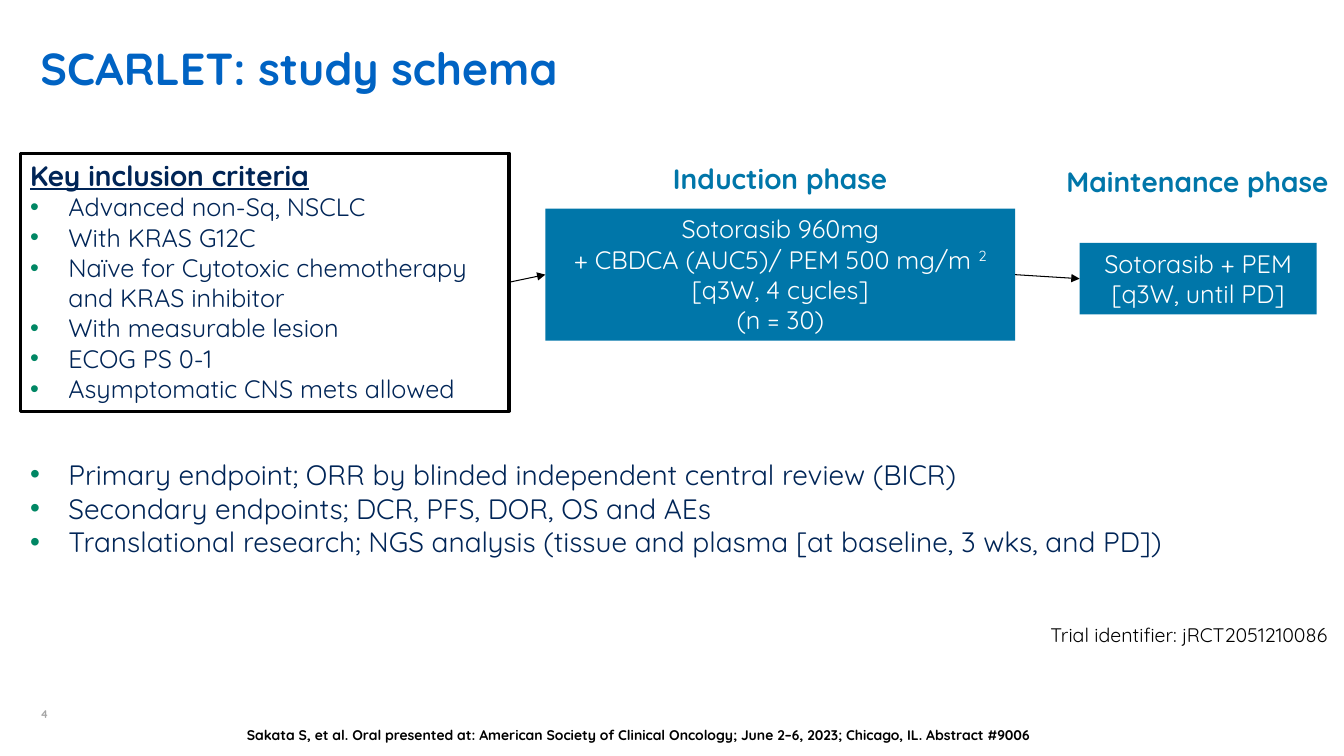
from dataclasses import dataclass
from lxml import etree
from pptx import Presentation
from pptx.dml.color import RGBColor
from pptx.enum.shapes import MSO_CONNECTOR, MSO_SHAPE
from pptx.enum.text import MSO_ANCHOR, PP_ALIGN
from pptx.oxml.ns import qn
from pptx.util import Inches, Pt

RECT = MSO_SHAPE.RECTANGLE
STRAIGHT = MSO_CONNECTOR.STRAIGHT
TOP, MIDDLE, BOTTOM = MSO_ANCHOR.TOP, MSO_ANCHOR.MIDDLE, MSO_ANCHOR.BOTTOM
LEFT, CENTER, RIGHT = PP_ALIGN.LEFT, PP_ALIGN.CENTER, PP_ALIGN.RIGHT


@dataclass(frozen=True)
class Theme:
    font: str = "Quicksand"
    title: str = "0063C3"
    navy: str = "002557"
    teal: str = "0076A9"
    green: str = "008764"
    gray: str = "A6A6A6"
    black: str = "000000"
    white: str = "FFFFFF"
    huge: int = 32
    large: int = 20
    body: int = 18
    small: int = 14
    note: int = 10
    tiny: int = 8


T = Theme()

TITLE = "SCARLET: study schema"
HEAD = "Key inclusion criteria"
CRITERIA = [
    "Advanced non-Sq, NSCLC",
    "With KRAS G12C",
    "Naïve for Cytotoxic chemotherapy and KRAS inhibitor",
    "With measurable lesion",
    "ECOG PS 0-1",
    "Asymptomatic CNS mets allowed",
]
ENDPOINTS = [
    "Primary endpoint; ORR by blinded independent central review (BICR)",
    "Secondary endpoints; DCR, PFS, DOR, OS and AEs",
    "Translational research; NGS analysis (tissue and plasma [at baseline, 3 wks, and PD])",
]
INDUCTION = [
    ["Sotorasib 960mg"],
    ["+ CBDCA (AUC5)/ PEM 500 mg/m ", ("2",), " [q3W, 4 cycles]"],
    ["(n = 30)"],
]
MAINTAIN = [["Sotorasib + PEM [q3W, until PD]"]]
SOURCE = ("Sakata S, et al. Oral presented at: American Society of Clinical Oncology; "
          "June 2–6, 2023; Chicago, IL. Abstract #9006")

# Shares of the slide in percent: left, top, width, height
SPOTS = {
    "title": (3, 5.33, 94, 7.2),
    "criteria": (1.5, 20.27, 36.38, 34.13),
    "endpoints": (1.5, 59.87, 89.03, 14.8),
    "induction": (40.58, 27.6, 34.95, 17.47),
    "maintain": (80.33, 32.13, 17.63, 9.47),
}
LABELS = [
    ("4", (3, 92.27, 3.38, 3.07), T.tiny, T.gray, True, LEFT),
    ("Induction phase", (46.05, 20.67, 24, 5.87), T.large, T.teal, True, CENTER),
    ("Maintenance phase", (78.23, 21.07, 21.75, 5.87), T.large, T.teal, True, CENTER),
    ("Trial identifier: jRCT2051210086", (75.53, 81.73, 24, 4.53), T.small, T.black, False, RIGHT),
    (SOURCE, (17.63, 95.47, 64.8, 3.6), T.note, T.black, True, LEFT),
]

deck = Presentation()
deck.slide_width, deck.slide_height = Inches(13.33), Inches(7.5)
slide = deck.slides.add_slide(deck.slide_layouts[5])


def place(spot):
    sides = (deck.slide_width, deck.slide_height) * 2
    return [round(share * side / 100) for share, side in zip(spot, sides)]


def setup(shape, anchor=TOP, bare=False):
    frame = shape.text_frame
    frame.word_wrap = True
    frame.vertical_anchor = anchor
    if bare:
        frame.margin_left = frame.margin_right = 0
        frame.margin_top = frame.margin_bottom = 0
    return frame


def write(frame, row, size, color, bold=False, align=LEFT, first=False):
    para = frame.paragraphs[0] if first else frame.add_paragraph()
    para.alignment = align
    for part in row:
        raised = isinstance(part, tuple)
        run = para.add_run()
        run.text = part[0] if raised else part
        font = run.font
        font.name, font.size, font.bold = T.font, Pt(size), bold
        font.color.rgb = RGBColor.from_string(color)
        if raised:
            run._r.get_or_add_rPr().set("baseline", "30000")
    return para


def bullet(para):
    props = para._p.get_or_add_pPr()
    props.set("marL", str(Inches(0.38)))
    props.set("indent", str(-Inches(0.38)))
    tint = etree.SubElement(props, qn("a:buClr"))
    etree.SubElement(tint, qn("a:srgbClr"), val=T.green)
    etree.SubElement(props, qn("a:buFont"), typeface="Arial")
    etree.SubElement(props, qn("a:buChar"), char="•")


def box(spot, fill=None):
    shape = slide.shapes.add_shape(RECT, *place(spot))
    shape.shadow.inherit = False
    if fill:
        shape.fill.solid()
        shape.fill.fore_color.rgb = RGBColor.from_string(fill)
        shape.line.fill.background()
    else:
        shape.fill.background()
        shape.line.color.rgb = RGBColor.from_string(T.black)
        shape.line.width = Pt(2.25)
    return shape


def arrow(start, end):
    line = slide.shapes.add_connector(STRAIGHT, 0, 0, 0, 0)
    line.begin_connect(start, 3)
    line.end_connect(end, 1)
    line.line.color.rgb = RGBColor.from_string(T.black)
    line.line.width = Pt(0.75)
    etree.SubElement(line.line._get_or_add_ln(), qn("a:tailEnd"), type="triangle")
    etree.SubElement(line._element.spPr, qn("a:effectLst"))


title = slide.shapes.title
title.left, title.top, title.width, title.height = place(SPOTS["title"])
write(setup(title, MIDDLE, True), [TITLE], T.huge, T.title, True, first=True)

steps = [box(SPOTS["criteria"])]
frame = setup(steps[0])
head = write(frame, [HEAD], T.large, T.navy, True, first=True)
head.runs[0].font.underline = True
for item in CRITERIA:
    bullet(write(frame, [item], T.body, T.navy))

frame = setup(slide.shapes.add_textbox(*place(SPOTS["endpoints"])))
for i, item in enumerate(ENDPOINTS):
    bullet(write(frame, [item], T.large, T.navy, first=i == 0))

for key, rows in (("induction", INDUCTION), ("maintain", MAINTAIN)):
    steps.append(box(SPOTS[key], T.teal))
    frame = setup(steps[-1])
    for i, row in enumerate(rows):
        write(frame, row, T.body, T.white, align=CENTER, first=i == 0)

for start, end in zip(steps, steps[1:]):
    arrow(start, end)

for text, spot, size, color, bold, align in LABELS:
    page = size == T.tiny
    frame = setup(slide.shapes.add_textbox(*place(spot)), BOTTOM if page else TOP, page)
    write(frame, [text], size, color, bold, align, first=True)

deck.save("out.pptx")
